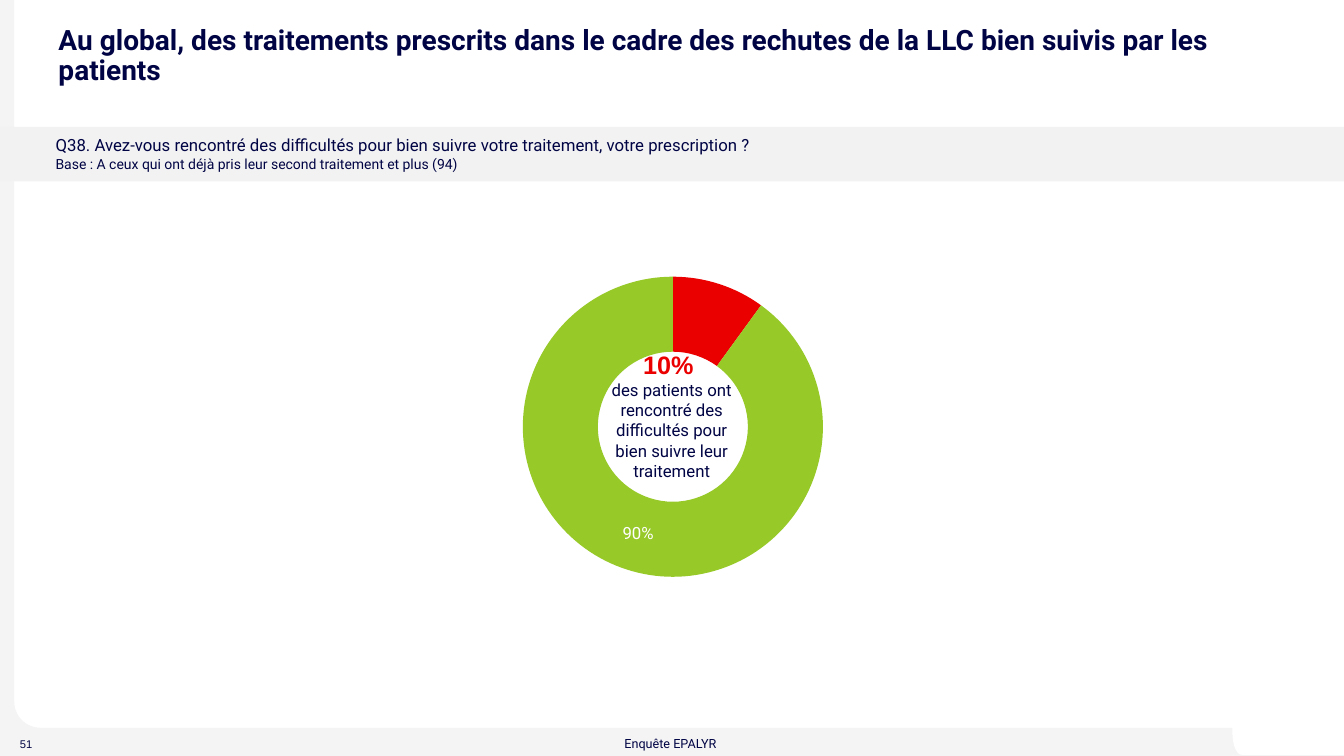
from math import cos, pi, sin
from lxml.etree import SubElement
from pptx import Presentation
from pptx.chart.data import CategoryChartData
from pptx.dml.color import RGBColor
from pptx.enum.chart import XL_CHART_TYPE
from pptx.enum.text import MSO_ANCHOR, PP_ALIGN
from pptx.oxml import parse_xml
from pptx.oxml.ns import nsdecls, qn
from pptx.util import Cm, Pt

NAVY = RGBColor(0x01, 0x04, 0x44)
RED = RGBColor(0xEB, 0x00, 0x00)
GREEN = RGBColor(0x97, 0xC9, 0x28)
WHITE = RGBColor(0xFF, 0xFF, 0xFF)
FRAME_GREY = RGBColor(0xF4, 0xF4, 0xF4)
BAND_GREY = RGBColor(0xF2, 0xF2, 0xF2)
WIDTH, HEIGHT = 33.87, 19.05


def style(font, size, color=NAVY, name="Roboto", bold=False):
    """Set the look of a font."""
    font.size, font.name, font.bold = Pt(size), name, bold
    font.color.rgb = color


def place(shape, box):
    """Move a shape to a box given in centimetres."""
    shape.left, shape.top, shape.width, shape.height = map(Cm, box)


def set_insets(text_frame, horizontal, vertical):
    """Set the text margins in centimetres."""
    text_frame.margin_left = text_frame.margin_right = Cm(horizontal)
    text_frame.margin_top = text_frame.margin_bottom = Cm(vertical)


def bottom_left_corner(left, bottom, radius_x, radius_y, steps=16):
    """Return the points of a rounded corner, from its left end to its bottom end."""
    angles = [pi / 2 * step / steps for step in range(steps + 1)]
    return [(left + radius_x * (1 - cos(angle)), bottom - radius_y * (1 - sin(angle)))
            for angle in angles]


def add_outline(slide, points, color, position):
    """Draw a filled outline at a position from the back."""
    points = [(Cm(x), Cm(y)) for x, y in points]
    builder = slide.shapes.build_freeform(*points[0])
    builder.add_line_segments(points[1:], close=True)
    shape = builder.convert_to_shape()
    shape.shadow.inherit = False
    shape.fill.solid()
    shape.fill.fore_color.rgb = color
    shape.line.fill.background()
    slide.shapes.element.insert(position, shape.element)


def add_frame(slide, box):
    """Draw the grey page frame and the white notch at its lower right."""
    left, top, width, height = box
    right, bottom = left + width, top + height
    inner_left, inner_bottom = left + 0.36, bottom - 0.71
    frame = [(left, top), (inner_left, top),
             *bottom_left_corner(inner_left, inner_bottom, 0.66, 0.66),
             (right, inner_bottom), (right, bottom), (left, bottom)]
    notch_left, notch_top, notch_bottom = right - 2.81, bottom - 2.64, bottom - 0.03
    notch = [(notch_left, notch_top),
             *bottom_left_corner(notch_left, notch_bottom, 0.23, 0.56),
             (right, notch_bottom), (right, notch_top)]
    add_outline(slide, frame, FRAME_GREY, 2)
    add_outline(slide, notch, WHITE, 3)


def add_label(slide, box, lines, alignment, anchor, inset=None):
    """Add a text box of lines, each with its text and font settings."""
    text_frame = slide.shapes.add_textbox(*map(Cm, box)).text_frame
    text_frame.word_wrap = True
    text_frame.vertical_anchor = anchor
    if inset is not None:
        set_insets(text_frame, inset, inset)
    text_frame.text = "\n".join(text for text, _ in lines)
    for paragraph, (_, settings) in zip(text_frame.paragraphs, lines):
        paragraph.alignment = alignment
        style(paragraph.runs[0].font, **settings)


def add_footer(slide, box):
    """Place the page number and the survey name in the footer."""
    left, top, width, height = box
    add_label(slide, (left + 0.25, top, 1.04, height), [("51", {"size": 8, "name": "Arial"})],
              PP_ALIGN.LEFT, MSO_ANCHOR.MIDDLE)
    add_label(slide, (left + 5.77, top + 0.28, 22.33, 0.33),
              [("Enquête EPALYR ", {"size": 9})], PP_ALIGN.CENTER, MSO_ANCHOR.MIDDLE)


def fill_title(slide, box):
    """Place and format the title."""
    title = slide.shapes.title
    place(title, box)
    text_frame = title.text_frame
    text_frame.text = ("Au global, des traitements prescrits dans le cadre des rechutes "
                       "de la LLC bien suivis par les patients")
    text_frame.vertical_anchor = MSO_ANCHOR.TOP
    paragraph = text_frame.paragraphs[0]
    paragraph.alignment = PP_ALIGN.LEFT
    paragraph.line_spacing = 0.9
    style(paragraph.runs[0].font, 20, bold=True)


def fill_question(slide, box):
    """Place the survey question and its base on a grey band."""
    band = slide.placeholders[1]
    place(band, box)
    band.fill.solid()
    band.fill.fore_color.rgb = BAND_GREY
    text_frame = band.text_frame
    set_insets(text_frame, 1.4, 0.2)
    paragraph = text_frame.paragraphs[0]
    paragraph.text = ("Q38. Avez-vous rencontré des difficultés pour bien suivre votre "
                      "traitement, votre prescription ?\v"
                      "Base : A ceux qui ont déjà pris leur second traitement et plus (94)")
    properties = paragraph._p.get_or_add_pPr()
    properties.set("marL", "0")
    properties.set("indent", "0")
    SubElement(properties, qn("a:buNone"))
    paragraph.space_before = Pt(0)
    for run, size in zip(paragraph.runs, (12, 10)):
        style(run.font, size)


def set_plot_area(chart, **fractions):
    """Fix the inner plot area as fractions of the chart."""
    plot_area = chart._chartSpace.chart.plotArea
    for layout in plot_area.findall(qn("c:layout")):
        plot_area.remove(layout)
    values = "".join(f'<c:{key} val="{value}"/>' for key, value in fractions.items())
    plot_area.insert(0, parse_xml(
        f'<c:layout {nsdecls("c")}><c:manualLayout><c:layoutTarget val="inner"/>'
        f'<c:xMode val="edge"/><c:yMode val="edge"/>{values}</c:manualLayout></c:layout>'))


def add_difficulty_chart(slide, box):
    """Add the doughnut of treatment difficulties with its central text."""
    data = CategoryChartData(number_format="0%")
    data.categories = ["1", "2"]
    data.add_series("Series 1", (0.1, 0.9))
    chart = slide.shapes.add_chart(XL_CHART_TYPE.DOUGHNUT, *map(Cm, box), data).chart
    chart.has_legend = False
    chart.has_title = False
    style(chart.font, 18)
    set_plot_area(chart, x=0.225, y=0.098, w=0.552, h=0.803)
    plot = chart.plots[0]
    plot.vary_by_categories = False
    plot._element.find(qn("c:holeSize")).set("val", "68")
    series = plot.series[0]
    for index, color in enumerate((RED, GREEN)):
        point = series.points[index].format
        point.fill.solid()
        point.fill.fore_color.rgb = color
        point.line.fill.background()
    labels = series.data_labels
    labels.show_value = True
    labels.show_percentage = False
    labels.number_format, labels.number_format_is_linked = "0%", False
    style(labels.font, 12, WHITE)
    labels._element.insert(0, parse_xml(
        f'<c:dLbl {nsdecls("c")}><c:idx val="0"/><c:delete val="1"/></c:dLbl>'))
    left, top, _, _ = box
    add_label(slide, (left + 5.03, top + 2.76, 3.68, 3.33),
              [("10% ", {"size": 18, "color": RED, "name": "Arial", "bold": True}),
               ("des patients ont rencontré des difficultés pour bien suivre leur traitement",
                {"size": 12})], PP_ALIGN.CENTER, MSO_ANCHOR.TOP, inset=0)


def build_slide(presentation):
    """Add the slide on treatment adherence."""
    slide = presentation.slides.add_slide(presentation.slide_layouts[1])
    add_frame(slide, (0, 0, WIDTH, HEIGHT))
    add_footer(slide, (0, 18.29, WIDTH, 0.91))
    fill_title(slide, (1.22, 0.53, 31.45, 2.11))
    fill_question(slide, (0, 3.2, WIDTH, 1.37))
    add_difficulty_chart(slide, (10.06, 6.05, 13.77, 9.42))


def main():
    """Build and save the presentation."""
    presentation = Presentation()
    presentation.slide_width, presentation.slide_height = Cm(WIDTH), Cm(HEIGHT)
    build_slide(presentation)
    presentation.save("out.pptx")


if __name__ == "__main__":
    main()
